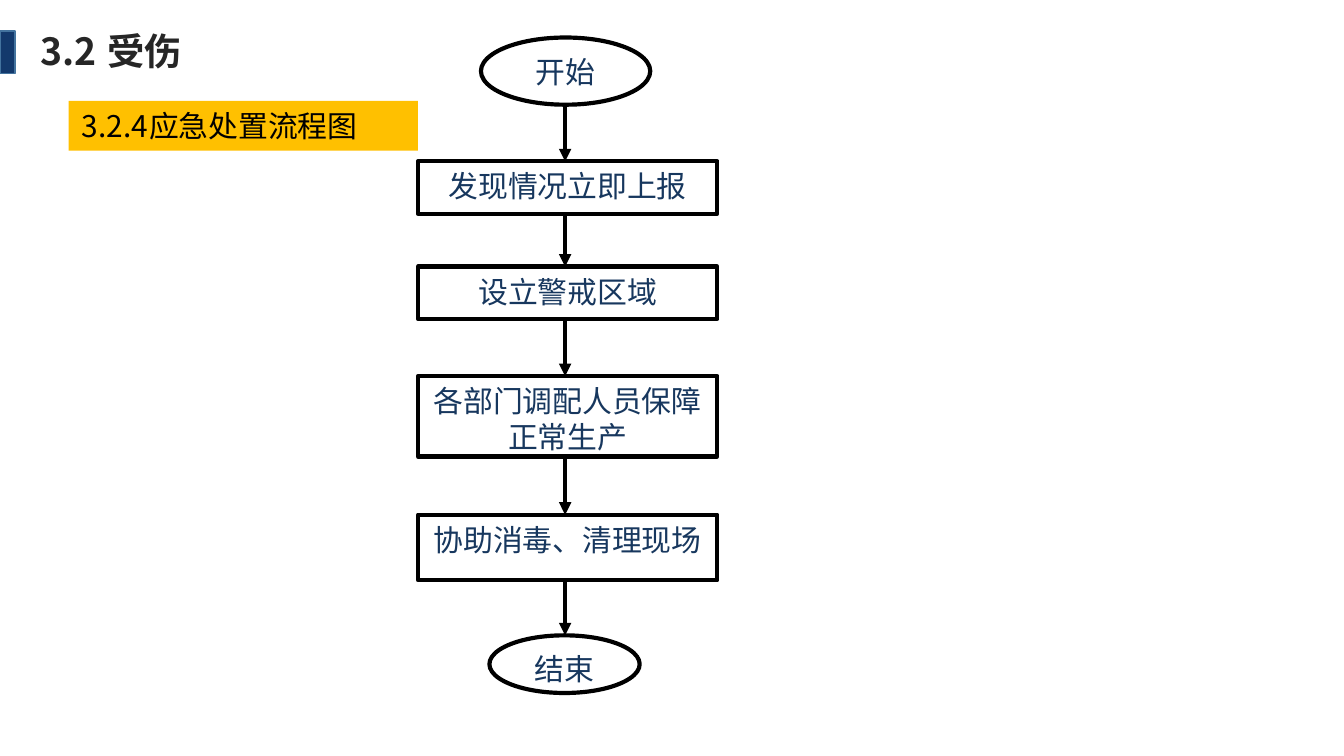
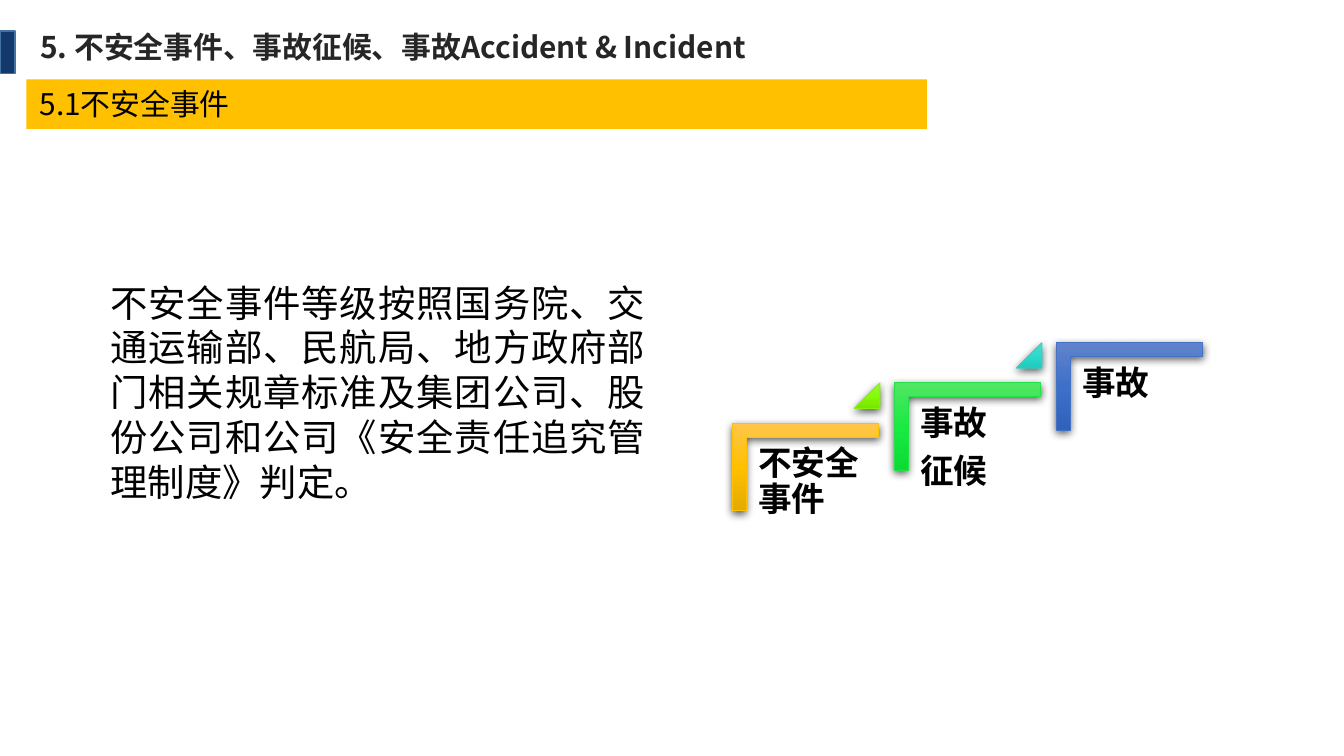
from dataclasses import dataclass
from itertools import pairwise

from lxml.etree import SubElement
from pptx import Presentation
from pptx.dml.color import RGBColor
from pptx.enum.shapes import MSO_CONNECTOR, MSO_SHAPE as Preset
from pptx.enum.text import MSO_ANCHOR, MSO_AUTO_SIZE, PP_ALIGN as Align
from pptx.oxml import parse_xml
from pptx.oxml.ns import nsdecls, qn
from pptx.util import Cm, Pt


@dataclass(frozen=True)
class Theme:
    font: str = "Noto Sans CJK SC"
    step_font: str = "Calibri"
    title: str = "262626"
    marker: str = "13396C"
    marker_line: str = "43739E"
    band: str = "FFC000"
    flow_text: str = "17375E"
    black: str = "000000"
    white: str = "FFFFFF"
    large: int = 20
    step: int = 18
    normal: int = 16
    flow_line: float = 2.25
    step_line: float = 0.5


THEME = Theme()


def rgb(value):
    return RGBColor.from_string(value)


def write_text(text_frame, text, size=THEME.normal, color=THEME.black,
               font=THEME.font, bold=False, align=Align.LEFT, wrap=True,
               inset=None, line_spacing=None, space_after=0, tab=None):
    text_frame.auto_size = MSO_AUTO_SIZE.NONE
    text_frame.word_wrap = wrap
    text_frame.vertical_anchor = MSO_ANCHOR.TOP
    if inset is not None:
        text_frame.margin_left = text_frame.margin_right = Cm(inset)
        text_frame.margin_top = text_frame.margin_bottom = Cm(inset)
    for index, line in enumerate(text.split("\n")):
        paragraph = text_frame.add_paragraph() if index else text_frame.paragraphs[0]
        properties = paragraph._p.get_or_add_pPr()
        properties.set("marL", "0")
        properties.set("indent", "0")
        SubElement(properties, qn("a:buNone"))
        if tab is not None:
            stops = SubElement(properties, qn("a:tabLst"))
            SubElement(stops, qn("a:tab"), pos=str(Cm(tab)), algn="l")
        paragraph.alignment = align
        paragraph.space_before = Pt(0)
        paragraph.space_after = Pt(space_after)
        if line_spacing:
            paragraph.line_spacing = line_spacing
        run = paragraph.add_run()
        run.text = line
        run.font.size = Pt(size)
        run.font.bold = bold
        run.font.name = font
        run.font.color.rgb = rgb(color)
        SubElement(run._r.get_or_add_rPr(), qn("a:ea"), typeface=THEME.font)


def place(shape, left, top, width, height):
    shape.left, shape.top = Cm(left), Cm(top)
    shape.width, shape.height = Cm(width), Cm(height)


class Deck:
    def __init__(self, theme):
        self.theme = theme
        self.presentation = Presentation()
        self.presentation.slide_width = Cm(25.4)
        self.presentation.slide_height = Cm(14.29)
        self.slide = None

    def start_slide(self, layout, title, width, height, size, tab=None):
        self.slide = self.presentation.slides.add_slide(
            self.presentation.slide_layouts.get_by_name(layout))
        heading = self.slide.shapes.title
        place(heading, 0.51, 0.41, width, height)
        write_text(heading.text_frame, title, size=size, bold=True,
                   color=self.theme.title, wrap=False, tab=tab)
        self.shape(Preset.RECTANGLE, 0, 0.58, 0.28, 0.81, self.theme.marker,
                   self.theme.marker_line, 1)

    def shape(self, preset, left, top, width, height, fill=None, line=None, weight=1):
        shape = self.slide.shapes.add_shape(
            preset, Cm(left), Cm(top), Cm(width), Cm(height))
        shape.shadow.inherit = False
        if fill:
            shape.fill.solid()
            shape.fill.fore_color.rgb = rgb(fill)
        if line:
            shape.line.color.rgb = rgb(line)
            shape.line.width = Pt(weight)
        else:
            shape.line.fill.background()
        return shape

    def band(self, text, left, top, width, tab=None):
        band = self.shape(Preset.RECTANGLE, left, top, width, 0.94, self.theme.band)
        write_text(band.text_frame, text, tab=tab)

    def body(self, text, left, top, width, height):
        body = self.slide.placeholders[1]
        place(body, left, top, width, height)
        write_text(body.text_frame, text, size=self.theme.large, align=Align.JUSTIFY)

    def text_box(self, text, left, top, width, height, **text_format):
        box = self.slide.shapes.add_textbox(Cm(left), Cm(top), Cm(width), Cm(height))
        write_text(box.text_frame, text, **text_format)

    def flow_node(self, preset, text, left, top, width, height):
        node = self.shape(preset, left, top, width, height, self.theme.white,
                          self.theme.black, self.theme.flow_line)
        write_text(node.text_frame, text, color=self.theme.flow_text, align=Align.CENTER)

    def arrow(self, x, top, bottom):
        arrow = self.slide.shapes.add_connector(
            MSO_CONNECTOR.STRAIGHT, Cm(x), Cm(top), Cm(x), Cm(bottom))
        arrow.line.color.rgb = rgb(self.theme.black)
        arrow.line.width = Pt(self.theme.flow_line)
        SubElement(arrow.line._get_or_add_ln(), qn("a:tailEnd"), type="triangle")
        SubElement(arrow._element.spPr, qn("a:effectLst"))

    def glossy(self, preset, left, top, width, height, colors, line, adjustments, rotation=0):
        shape = self.shape(preset, left, top, width, height, colors[0], line,
                           self.theme.step_line)
        shape.rotation = rotation
        for index, value in enumerate(adjustments):
            shape.adjustments[index] = value
        properties = shape._element.spPr
        stops = "".join(
            f'<a:gs pos="{index * 50000}"><a:srgbClr val="{color}"/></a:gs>'
            for index, color in enumerate(colors))
        gradient = parse_xml(
            f'<a:gradFill {nsdecls("a")} rotWithShape="0"><a:gsLst>{stops}</a:gsLst>'
            '<a:lin ang="5400000" scaled="0"/></a:gradFill>')
        properties.replace(properties.find(qn("a:solidFill")), gradient)
        shadow = SubElement(
            properties.find(qn("a:effectLst")), qn("a:outerShdw"),
            blurRad=str(Pt(4.5)), dist=str(Pt(1.5)), dir="5400000",
            algn="ctr", rotWithShape="0")
        shadow_color = SubElement(shadow, qn("a:srgbClr"), val=self.theme.black)
        SubElement(shadow_color, qn("a:alpha"), val="63000")


def build_injury_flow(deck):
    deck.start_slide("Title Only", "3.2\t受伤", 3.66, 1.12, THEME.large, tab=1.72)
    nodes = [
        (Preset.OVAL, "开始", 9.09, 0.71, 3.2, 1.27),
        (Preset.RECTANGLE, "发现情况立即上报", 7.9, 3.05, 5.66, 0.99),
        (Preset.RECTANGLE, "设立警戒区域", 7.9, 5.04, 5.66, 0.99),
        (Preset.RECTANGLE, "各部门调配人员保障正常生产", 7.9, 7.11, 5.66, 1.52),
        (Preset.RECTANGLE, "协助消毒、清理现场", 7.9, 9.73, 5.66, 1.24),
        (Preset.OVAL, "结束", 9.25, 12.01, 2.84, 1.09),
    ]
    for node in nodes:
        deck.flow_node(*node)
    for (*_, top, _, height), (*_, next_top, _, _) in pairwise(nodes):
        deck.arrow(10.68, top + height, next_top)
    deck.band("3.2.4\t应急处置流程图", 1.3, 1.91, 6.6, tab=1.64)


def build_unsafe_events(deck):
    deck.start_slide("Title and Content", "5. 不安全事件、事故征候、事故Accident & Incident",
                     14.5, 1.63, THEME.normal)
    deck.band("5.1不安全事件", 0.5, 1.5, 17.02)
    deck.body("不安全事件等级按照国务院、交通运输部、民航局、地方政府部门相关规章标准及"
              "集团公司、股份公司和公司《安全责任追究管理制度》判定。",
              1.83, 5.16, 10.62, 5.82)
    steps = [
        ("不安全事件", ("FFC64B", "FFC000", "E3AB00"), "FFC000"),
        ("事故\n征候", ("51E663", "19EA42", "0CDB34"), "23E148"),
        ("事故", ("6183CB", "3E70CA", "3062BB"), "4472C4"),
    ]
    rises = [
        (("94F44C", "87FB06", "78E500"), "86F011"),
        (("58D8CC", "2BDACC", "1ECBBD"), "33D2C5"),
    ]
    step_width, step_rise = 3.06, 0.76
    for index, (text, colors, line) in enumerate(steps):
        left, top = 14.4 + index * step_width, 7.44 - index * step_rise
        deck.glossy(Preset.CORNER, left, top, 1.65, 2.77, colors, line,
                    (0.16, 0.16), rotation=90)
        deck.text_box(text, left - 0.25, top + 0.82, 2.49, 2.18, size=THEME.step,
                      font=THEME.step_font, bold=True, inset=0.18,
                      line_spacing=0.9, space_after=6.3)
        if index < len(rises):
            deck.glossy(Preset.ISOSCELES_TRIANGLE, left + 1.75, top - 0.2, 0.48, 0.48,
                        *rises[index], (1,))


def main():
    deck = Deck(THEME)
    build_injury_flow(deck)
    build_unsafe_events(deck)
    deck.presentation.save("out.pptx")


if __name__ == "__main__":
    main()
